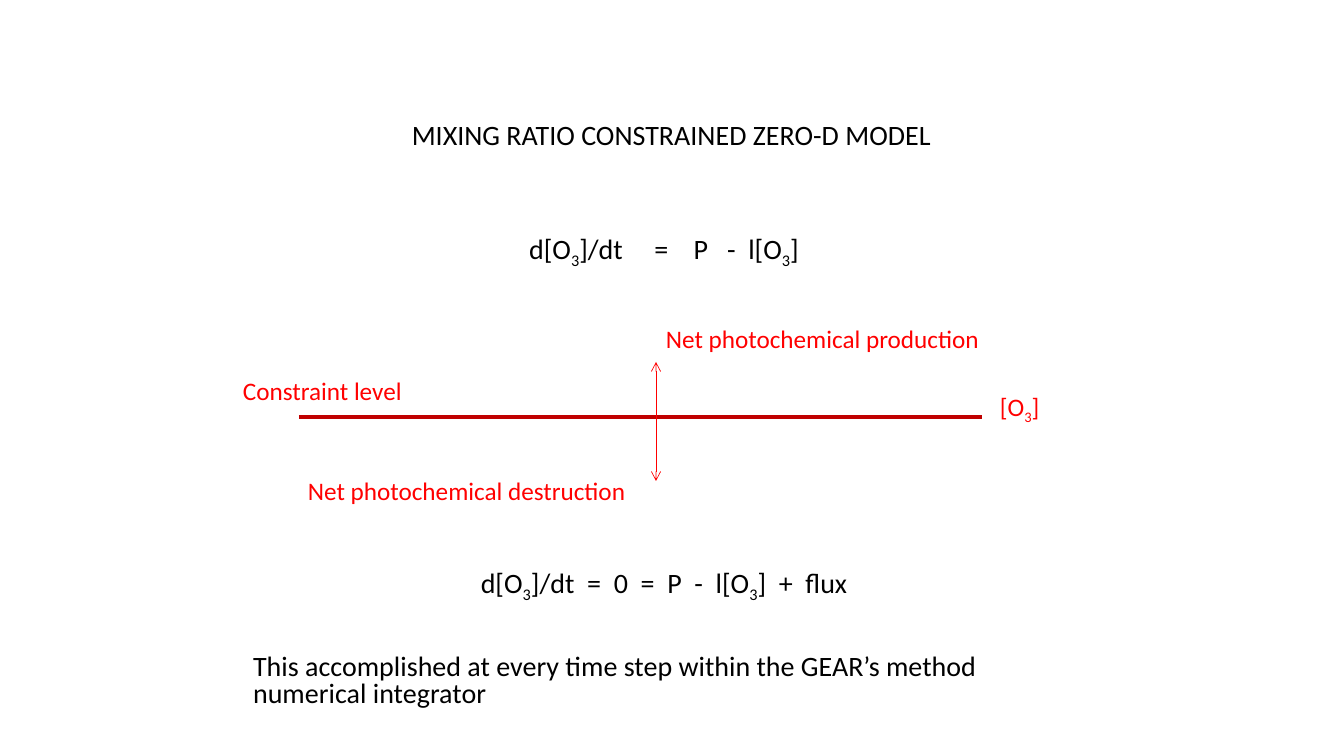
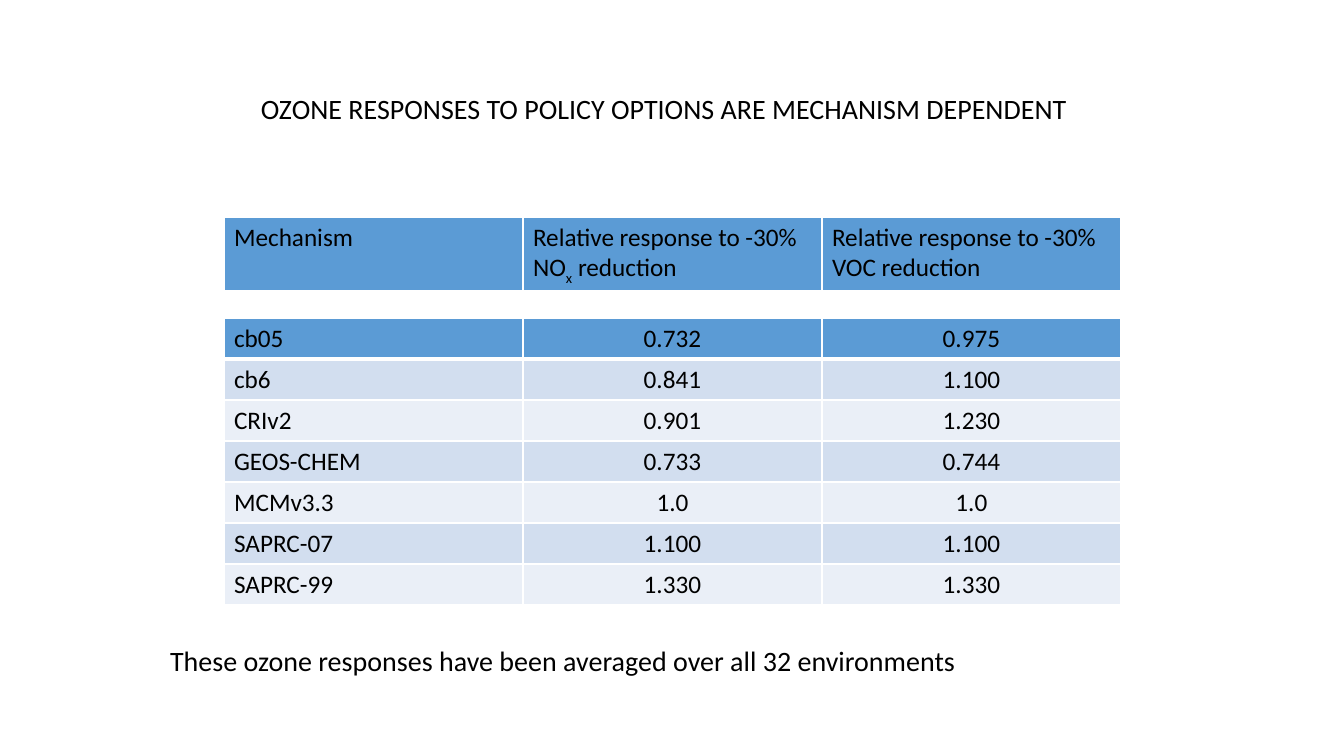
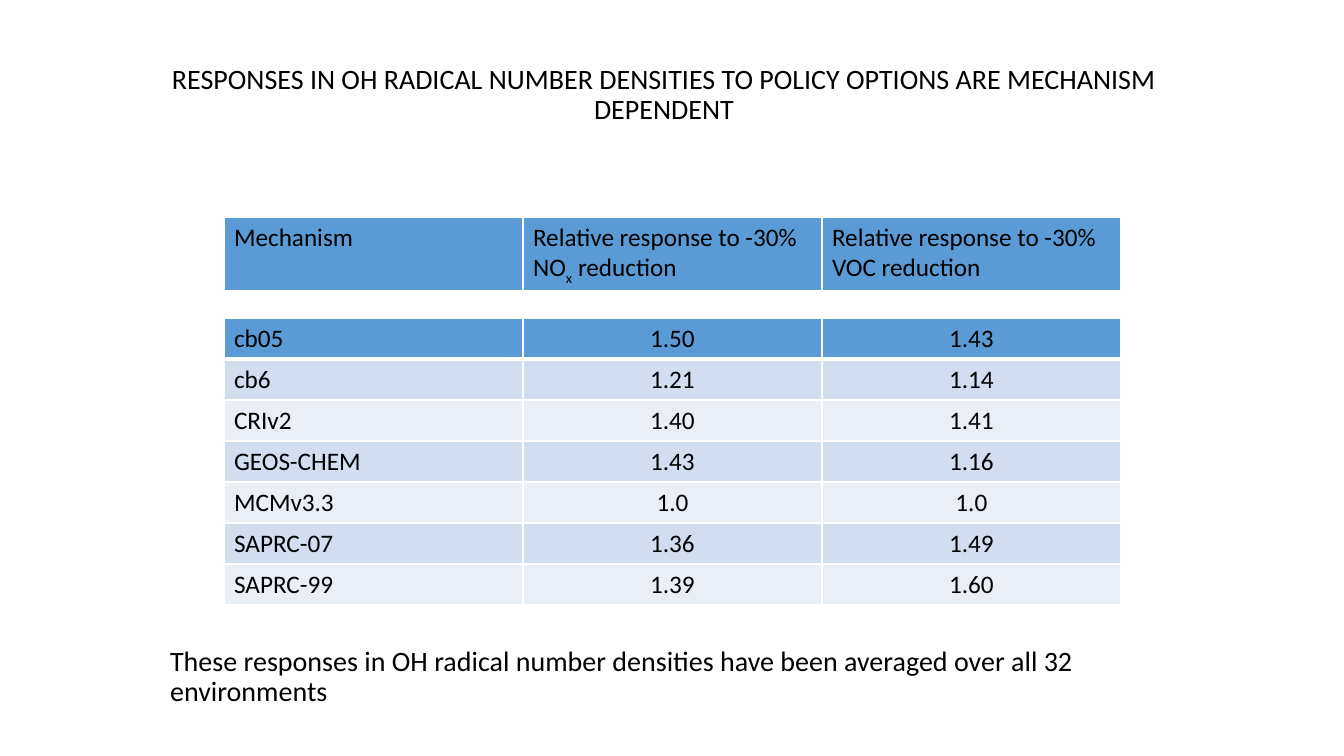
from typing import NamedTuple

from lxml.etree import SubElement
from pptx import Presentation
from pptx.dml.color import RGBColor
from pptx.enum.shapes import MSO_CONNECTOR
from pptx.enum.text import MSO_ANCHOR, MSO_AUTO_SIZE, PP_ALIGN
from pptx.oxml.ns import qn
from pptx.util import Pt

EMU_PER_PX = 914400 / 100.8
FONT = "Calibri"
BLACK, WHITE, RED, DARK_RED = "000000", "FFFFFF", "FF0000", "C00000"
HEADER_BLUE, BAND_DARK, BAND_LIGHT = "5B9BD5", "D2DEEF", "EAEFF7"
HEADING_SIZE, LABEL_SIZE = 20, 18
THIN, THICK = 1, 3
COLUMN_WIDTH, HEADER_HEIGHT, ROW_HEIGHT = 299, 71, 41
TABLE_LEFT, HEADER_TOP, DATA_TOP = 224, 217, 318


class Box(NamedTuple):
    left: int
    top: int
    width: int
    height: int


class Run(NamedTuple):
    text: str
    subscript: bool = False
    tracking: float = 0


class Label(NamedTuple):
    text: str
    box: Box


class Line(NamedTuple):
    start: tuple[int, int]
    end: tuple[int, int]
    color: str
    width: float
    arrow: bool = False


class BodyParagraph(NamedTuple):
    runs: list[Run]
    align: PP_ALIGN
    space_before: float


class ResponseSlide(NamedTuple):
    title: str
    note: str
    rows: list[tuple[str, str, str]]


MODEL_TITLE_BOX = Box(243, 69, 857, 88)
MODEL_BODY_BOX = Box(243, 179, 842, 539)
MODEL_BODY_INSET = 56
RESPONSE_TITLE_BOX = Box(160, 39, 1008, 92)
RESPONSE_NOTE_BOX = Box(160, 642, 1008, 84)

MODEL_LINES = [
    Line((299, 417), (982, 417), DARK_RED, 2.25),
    Line((656, 417), (656, 362), RED, 0.5, arrow=True),
    Line((656, 417), (656, 481), RED, 0.5, arrow=True),
]
MODEL_LABELS = [
    Label("[O_3_]", Box(990, 386, 127, 40)),
    Label("Net photochemical production", Box(656, 318, 420, 40)),
    Label("Net photochemical destruction", Box(298, 470, 373, 40)),
    Label("Constraint level", Box(233, 370, 270, 40)),
]
TABLE_HEADER = (
    "Mechanism",
    "Relative response to -30% NO_x_ reduction",
    "Relative response to -30% VOC reduction",
)
RESPONSE_SLIDES = [
    ResponseSlide(
        "OZONE RESPONSES TO POLICY OPTIONS ARE MECHANISM DEPENDENT",
        "These ozone responses have been averaged over all 32 environments",
        [
            ("cb05", "0.732", "0.975"),
            ("cb6", "0.841", "1.100"),
            ("CRIv2", "0.901", "1.230"),
            ("GEOS-CHEM", "0.733", "0.744"),
            ("MCMv3.3", "1.0", "1.0"),
            ("SAPRC-07", "1.100", "1.100"),
            ("SAPRC-99", "1.330", "1.330"),
        ],
    ),
    ResponseSlide(
        "RESPONSES IN OH RADICAL NUMBER DENSITIES TO POLICY OPTIONS ARE MECHANISM DEPENDENT",
        "These responses in OH radical number densities have been averaged over all 32 environments",
        [
            ("cb05", "1.50", "1.43"),
            ("cb6", "1.21", "1.14"),
            ("CRIv2", "1.40", "1.41"),
            ("GEOS-CHEM", "1.43", "1.16"),
            ("MCMv3.3", "1.0", "1.0"),
            ("SAPRC-07", "1.36", "1.49"),
            ("SAPRC-99", "1.39", "1.60"),
        ],
    ),
]


def px(length: int) -> int:
    return round(length * EMU_PER_PX)


def emu_box(box: Box) -> list[int]:
    return [px(length) for length in box]


def rgb(color: str) -> RGBColor:
    return RGBColor.from_string(color)


def marked_runs(markup: str) -> list[Run]:
    """Split text into runs; a pair of underscores encloses a subscript."""
    return [Run(text, index % 2 == 1) for index, text in enumerate(markup.split("_")) if text]


def equation_runs(markup: str, gaps: list[float]) -> list[Run]:
    """Split an equation into runs, widening each space by its gap in points."""
    remaining = iter(gaps)
    runs = []
    for run in marked_runs(markup):
        for index, word in enumerate(run.text.split(" ")):
            if index:
                runs.append(Run(" ", tracking=next(remaining)))
            if word:
                runs.append(Run(word, run.subscript))
    return runs


def write_runs(paragraph, runs: list[Run], size: int, color: str = BLACK) -> None:
    for item in runs:
        run = paragraph.add_run()
        run.text = item.text
        font = run.font
        font.name, font.size, font.bold = FONT, Pt(size), False
        font.color.rgb = rgb(color)
        properties = run._r.get_or_add_rPr()
        if item.subscript:
            properties.set("baseline", "-25000")
        if item.tracking:
            properties.set("spc", str(round(item.tracking * 100)))


def place_placeholder(shape, box: Box, anchor: MSO_ANCHOR):
    shape.left, shape.top, shape.width, shape.height = emu_box(box)
    frame = shape.text_frame
    frame.word_wrap = True
    frame.auto_size = MSO_AUTO_SIZE.NONE
    frame.vertical_anchor = anchor
    return frame


def add_titled_slide(presentation, title: str, box: Box):
    slide = presentation.slides.add_slide(presentation.slide_layouts[0])
    paragraph = place_placeholder(slide.shapes.title, box, MSO_ANCHOR.BOTTOM).paragraphs[0]
    paragraph.alignment = PP_ALIGN.CENTER
    paragraph.line_spacing = 0.9
    write_runs(paragraph, marked_runs(title), HEADING_SIZE)
    return slide


def fill_body(slide, box: Box, paragraphs: list[BodyParagraph], line_spacing: float):
    frame = place_placeholder(slide.placeholders[1], box, MSO_ANCHOR.TOP)
    for index, item in enumerate(paragraphs):
        paragraph = frame.add_paragraph() if index else frame.paragraphs[0]
        paragraph.alignment = item.align
        paragraph.line_spacing = line_spacing
        paragraph.space_before = Pt(item.space_before)
        write_runs(paragraph, item.runs, HEADING_SIZE)
    return frame


def add_line(slide, line: Line) -> None:
    ends = [px(length) for length in line.start + line.end]
    connector = slide.shapes.add_connector(MSO_CONNECTOR.STRAIGHT, *ends)
    connector.line.color.rgb = rgb(line.color)
    connector.line.width = Pt(line.width)
    properties = connector._element.spPr
    if line.arrow:
        SubElement(properties.find(qn("a:ln")), qn("a:tailEnd"), type="arrow")
    SubElement(properties, qn("a:effectLst"))


def add_label(slide, label: Label) -> None:
    frame = slide.shapes.add_textbox(*emu_box(label.box)).text_frame
    frame.word_wrap = True
    frame.auto_size = MSO_AUTO_SIZE.SHAPE_TO_FIT_TEXT
    write_runs(frame.paragraphs[0], marked_runs(label.text), LABEL_SIZE, RED)


def set_borders(cell, top: int, bottom: int) -> None:
    properties = cell._tc.get_or_add_tcPr()
    for side, width in (("L", THIN), ("R", THIN), ("T", top), ("B", bottom)):
        border = SubElement(properties, qn(f"a:ln{side}"), w=str(Pt(width)))
        fill = SubElement(border, qn("a:solidFill"))
        SubElement(fill, qn("a:srgbClr"), val=WHITE)


def add_banded_table(slide, top: int, row_height: int, rows: list, value_align: PP_ALIGN) -> None:
    """Draw rows under a blue first row that is set off by a thick rule."""
    columns = len(rows[0])
    box = Box(TABLE_LEFT, top, COLUMN_WIDTH * columns, row_height * len(rows))
    table = slide.shapes.add_table(len(rows), columns, *emu_box(box)).table
    table.horz_banding = False
    for column in table.columns:
        column.width = px(COLUMN_WIDTH)
    for row_index, texts in enumerate(rows):
        table.rows[row_index].height = px(row_height)
        band = BAND_DARK if row_index % 2 else BAND_LIGHT
        for column_index, text in enumerate(texts):
            cell = table.cell(row_index, column_index)
            set_borders(
                cell,
                top=THICK if row_index == 1 else THIN,
                bottom=THICK if row_index == 0 else THIN,
            )
            cell.fill.solid()
            cell.fill.fore_color.rgb = rgb(band if row_index else HEADER_BLUE)
            paragraph = cell.text_frame.paragraphs[0]
            paragraph.alignment = value_align if column_index else PP_ALIGN.LEFT
            write_runs(paragraph, marked_runs(text), LABEL_SIZE)


def add_model_slide(presentation) -> None:
    slide = add_titled_slide(
        presentation, "MIXING RATIO CONSTRAINED ZERO-D MODEL", MODEL_TITLE_BOX
    )
    balance = equation_runs("d[O_3_]/dt = P - l[O_3_]", [18, 13.5, 9, 4.5])
    constrained = equation_runs("d[O_3_]/dt = 0 = P - l[O_3_] + flux", [4.5] * 8)
    remark = marked_runs(
        "This accomplished at every time step within the GEAR’s method numerical integrator"
    )
    paragraphs = [
        BodyParagraph(balance, PP_ALIGN.CENTER, 0),
        BodyParagraph(constrained, PP_ALIGN.CENTER, 217),
        BodyParagraph(remark, PP_ALIGN.LEFT, 39.5),
    ]
    frame = fill_body(slide, MODEL_BODY_BOX, paragraphs, line_spacing=0.8)
    frame.margin_top = px(MODEL_BODY_INSET)
    for line in MODEL_LINES:
        add_line(slide, line)
    for label in MODEL_LABELS:
        add_label(slide, label)


def add_response_slide(presentation, content: ResponseSlide) -> None:
    slide = add_titled_slide(presentation, content.title, RESPONSE_TITLE_BOX)
    note = BodyParagraph(marked_runs(content.note), PP_ALIGN.LEFT, 10)
    fill_body(slide, RESPONSE_NOTE_BOX, [note], line_spacing=0.9)
    add_banded_table(slide, DATA_TOP, ROW_HEIGHT, content.rows, PP_ALIGN.CENTER)
    add_banded_table(slide, HEADER_TOP, HEADER_HEIGHT, [TABLE_HEADER], PP_ALIGN.LEFT)


def main() -> None:
    presentation = Presentation()
    presentation.slide_width, presentation.slide_height = px(1344), px(756)
    add_model_slide(presentation)
    for content in RESPONSE_SLIDES:
        add_response_slide(presentation, content)
    presentation.save("out.pptx")


if __name__ == "__main__":
    main()
